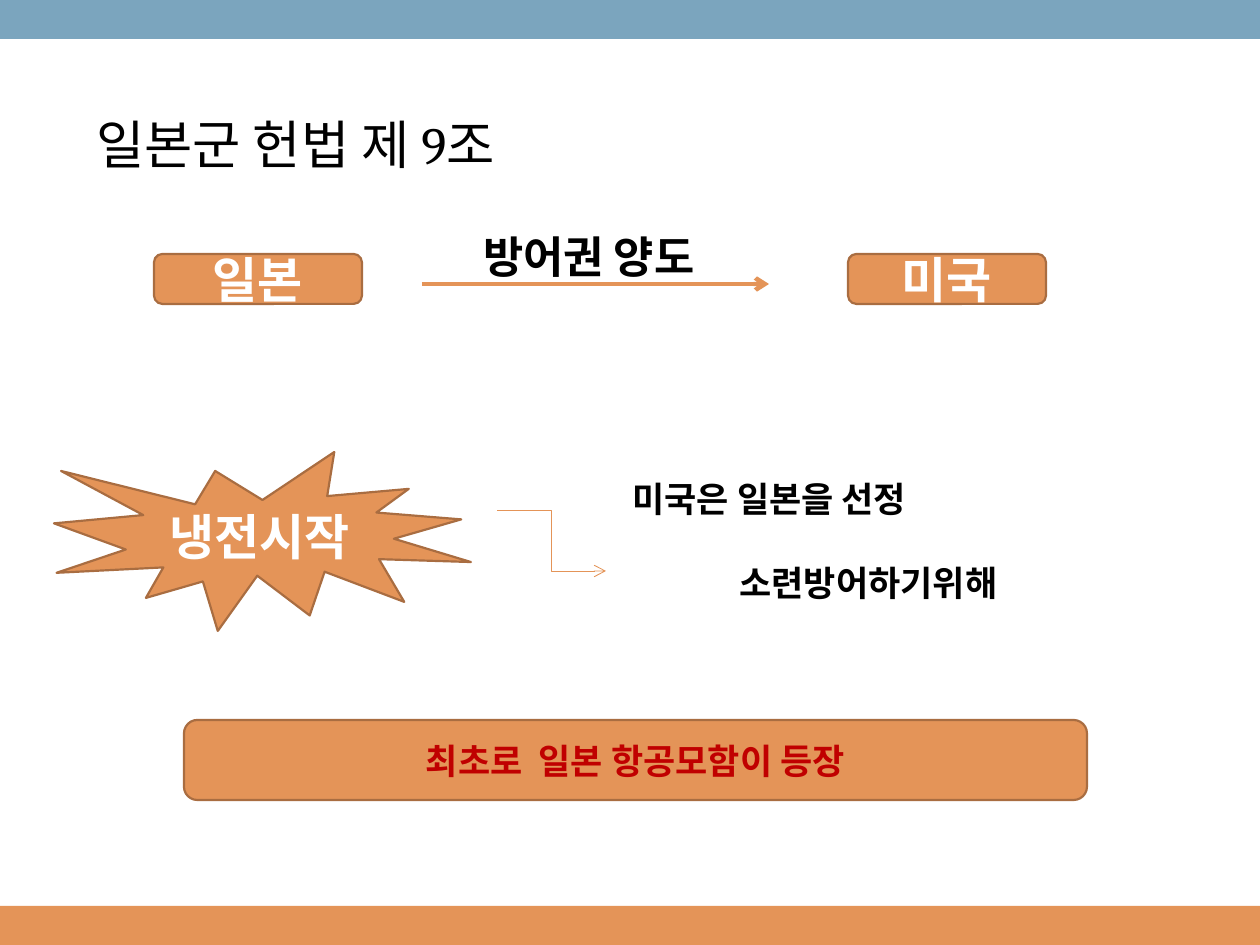
from dataclasses import dataclass

from lxml.etree import SubElement
from pptx import Presentation
from pptx.dml.color import RGBColor
from pptx.enum.shapes import MSO_CONNECTOR, MSO_SHAPE
from pptx.enum.text import MSO_ANCHOR, PP_ALIGN
from pptx.oxml.ns import qn
from pptx.util import Emu, Pt

PX_PER_INCH = 126
SLIDE_WIDTH, SLIDE_HEIGHT = 1260, 945
BAND_HEIGHT = 39


@dataclass(frozen=True)
class Theme:
    font: str = "Cambria"
    orange: str = "E49458"
    outline: str = "A96D41"
    blue: str = "7BA5BE"
    black: str = "000000"
    white: str = "FFFFFF"
    red: str = "C00000"
    title_size: int = 30
    box_size: int = 28
    label_size: int = 25
    body_size: int = 20


THEME = Theme()


def px(value):
    return Emu(round(value * 914400 / PX_PER_INCH))


def color(code):
    return RGBColor.from_string(code)


def style_paragraph(paragraph, text, size, text_color, bold=True):
    paragraph.text = text
    font = paragraph.font
    font.name = THEME.font
    font.size = Pt(size)
    font.bold = bold
    font.color.rgb = color(text_color)


def add_filled_shape(slide, kind, box, fill):
    shape = slide.shapes.add_shape(kind, *map(px, box))
    shape.shadow.inherit = False
    shape.fill.solid()
    shape.fill.fore_color.rgb = color(fill)
    shape.line.fill.background()
    return shape


def add_labelled_shape(slide, kind, box, text, size=THEME.box_size,
                       text_color=THEME.white):
    shape = add_filled_shape(slide, kind, box, THEME.orange)
    shape.line.color.rgb = color(THEME.outline)
    shape.line.width = Pt(1.25)
    frame = shape.text_frame
    frame.vertical_anchor = MSO_ANCHOR.MIDDLE
    paragraph = frame.paragraphs[0]
    paragraph.alignment = PP_ALIGN.CENTER
    style_paragraph(paragraph, text, size, text_color)


def add_text(slide, box, lines, size, bold=True):
    frame = slide.shapes.add_textbox(*map(px, box)).text_frame
    frame.word_wrap = True
    for index, line in enumerate(lines):
        paragraph = frame.add_paragraph() if index else frame.paragraphs[0]
        style_paragraph(paragraph, line, size, THEME.black, bold)
    return frame


def add_arrow(slide, kind, start, end, width):
    connector = slide.shapes.add_connector(kind, *map(px, start + end))
    connector.line.color.rgb = color(THEME.orange)
    connector.line.width = Pt(width)
    SubElement(connector.line._get_or_add_ln(), qn("a:tailEnd"), type="arrow")
    SubElement(connector._element.spPr, qn("a:effectLst"))


def main():
    presentation = Presentation()
    presentation.slide_width = px(SLIDE_WIDTH)
    presentation.slide_height = px(SLIDE_HEIGHT)
    slide = presentation.slides.add_slide(presentation.slide_layouts[6])

    # Bands along the bottom and top edges
    for top, fill in ((SLIDE_HEIGHT - BAND_HEIGHT, THEME.orange), (0, THEME.blue)):
        add_filled_shape(slide, MSO_SHAPE.RECTANGLE,
                         (0, top, SLIDE_WIDTH, BAND_HEIGHT), fill)

    # Title
    add_text(slide, (84, 106, 507, 77), ["일본군 헌법 제 9조"],
             THEME.title_size, bold=False)

    # Transfer of defence rights from Japan to the United States
    for left, width, country in ((154, 208, "일본"), (848, 198, "미국")):
        add_labelled_shape(slide, MSO_SHAPE.ROUNDED_RECTANGLE,
                           (left, 254, width, 50), country)
    add_arrow(slide, MSO_CONNECTOR.STRAIGHT, (422, 284), (769, 284), 2.5)
    add_text(slide, (471, 224, 268, 66), ["방어권 양도"], THEME.label_size)

    # Outcome
    add_labelled_shape(slide, MSO_SHAPE.ROUNDED_RECTANGLE, (184, 720, 903, 80),
                       "최초로  일본 항공모함이 등장", THEME.body_size, THEME.red)

    # Start of the Cold War and the reason for the choice
    add_labelled_shape(slide, MSO_SHAPE.EXPLOSION1, (54, 452, 417, 179), "냉전시작")
    reason = add_text(slide, (620, 471, 427, 140),
                      ["미국은 일본을 선정", "소련방어하기위해"], THEME.body_size)
    purpose = reason.paragraphs[1]
    purpose.space_before = Pt(24)
    purpose._p.get_or_add_pPr().set("marL", str(px(107)))
    add_arrow(slide, MSO_CONNECTOR.ELBOW, (497, 511), (606, 571), 0.5)

    presentation.save("out.pptx")


if __name__ == "__main__":
    main()
